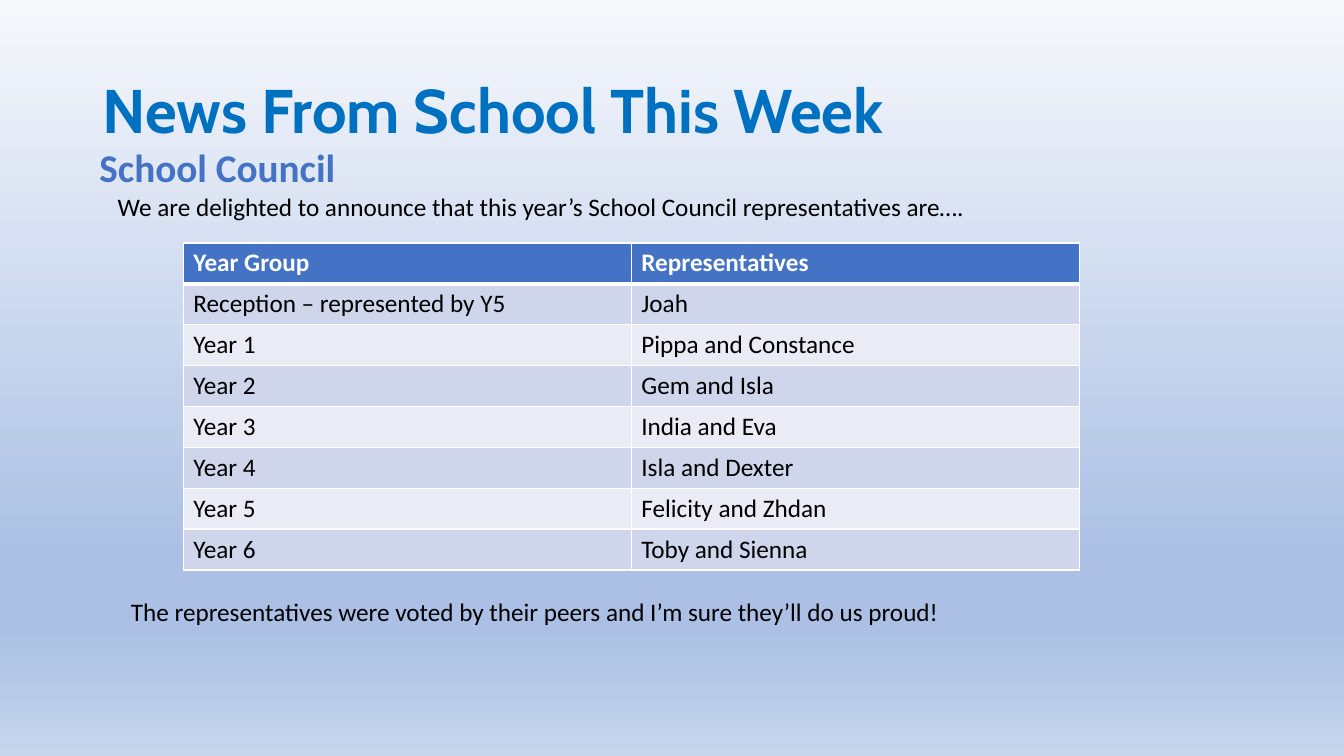
from lxml.etree import SubElement as add_child
from pptx import Presentation
from pptx.dml.color import RGBColor
from pptx.enum.text import MSO_ANCHOR as Anchor, MSO_AUTO_SIZE as AutoSize, PP_ALIGN as Align
from pptx.oxml.ns import qn
from pptx.util import Pt

BLUE, BLACK, WHITE = "4472C4", "000000", "FFFFFF"
BANDS = ("CFD5EA", "E9EBF5")
SKY_STOPS = [(0, "F6F8FC"), (74, "ABC0E4"), (83, "ABC0E4"), (100, "C7D5ED")]
COUNCIL = [
    ("Year Group", "Representatives"),
    ("Reception – represented by Y5", "Joah"),
    ("Year 1", "Pippa and Constance"),
    ("Year 2", "Gem and Isla"),
    ("Year 3", "India and Eva"),
    ("Year 4", "Isla and Dexter"),
    ("Year 5", "Felicity and Zhdan"),
    ("Year 6", "Toby and Sienna"),
]


def color(hex_string):
    return RGBColor.from_string(hex_string)


def add_run(para, text, size, hex_string, bold=False, font="Calibri"):
    span = para.add_run()
    span.text = text
    span.font.name, span.font.size, span.font.bold = font, Pt(size), bold
    span.font.color.rgb = color(hex_string)


def paint_background(slide):
    fill = slide.background.fill
    fill.gradient()
    fill.gradient_angle = 270
    # Four stops need XML, as the default gradient has two
    stop_list = slide.element.find(".//" + qn("a:gsLst"))
    for stop in list(stop_list):
        stop_list.remove(stop)
    for percent, hex_string in SKY_STOPS:
        stop = add_child(stop_list, qn("a:gs"), pos=str(percent * 1000))
        add_child(stop, qn("a:srgbClr"), val=hex_string)


def place_title(slide, box, text):
    title = slide.shapes.title
    title.left, title.top, title.width, title.height = map(Pt, box)
    frame = title.text_frame
    frame.vertical_anchor = Anchor.MIDDLE
    frame.word_wrap = True
    para = frame.paragraphs[0]
    para.alignment, para.line_spacing = Align.LEFT, 0.9
    add_run(para, text, 44, "0070C0", True, "Cabin")


def place_text(slide, box, text, size=18, hex_string=BLACK, bold=False, wrap=True):
    frame = slide.shapes.add_textbox(*map(Pt, box)).text_frame
    frame.word_wrap = wrap
    frame.auto_size = AutoSize.SHAPE_TO_FIT_TEXT
    add_run(frame.paragraphs[0], text, size, hex_string, bold)


def border_cell(cell, widths):
    properties = cell._tc.get_or_add_tcPr()
    for index, (side, width) in enumerate(widths.items()):
        line = properties.makeelement(qn("a:ln" + side), {"w": str(Pt(width))})
        add_child(add_child(line, qn("a:solidFill")), qn("a:srgbClr"), val=WHITE)
        properties.insert(index, line)  # borders come before the fill


def place_council_table(slide, box, rows):
    left, top, width, height = box
    table = slide.shapes.add_table(len(rows), len(rows[0]), *map(Pt, box)).table
    for column in table.columns:
        column.width = Pt(width / len(rows[0]))
    for number, texts in enumerate(rows):
        table.rows[number].height = Pt(height / len(rows))
        header = number == 0
        for cell, text in zip(table.rows[number].cells, texts):
            cell.fill.solid()
            cell.fill.fore_color.rgb = color(BLUE if header else BANDS[(number - 1) % 2])
            border_cell(cell, {"L": 1, "R": 1, "T": 3 if number == 1 else 1,
                               "B": 3 if header else 1})
            add_run(cell.text_frame.paragraphs[0], text, 18,
                    WHITE if header else BLACK, header)


def build_news_slide(deck):
    slide = deck.slides.add_slide(deck.slide_layouts[5])
    paint_background(slide)
    # Headings
    place_title(slide, (66, 28.8, 828, 104.4), "News From School This Week")
    place_text(slide, (64, 98.6, 185, 41), "School Council", 28, BLUE, True, wrap=False)
    # Announcement, table and closing line
    place_text(slide, (77, 133.2, 694, 29),
               "We are delighted to announce that this year’s School Council representatives are….")
    place_council_table(slide, (131, 173.5, 640, 233.6), COUNCIL)
    place_text(slide, (86.4, 422.6, 719, 29),
               "The representatives were voted by their peers and I’m sure they’ll do us proud!")


def main():
    deck = Presentation()
    deck.slide_width, deck.slide_height = Pt(960), Pt(540)
    build_news_slide(deck)
    deck.save("out.pptx")


if __name__ == "__main__":
    main()
